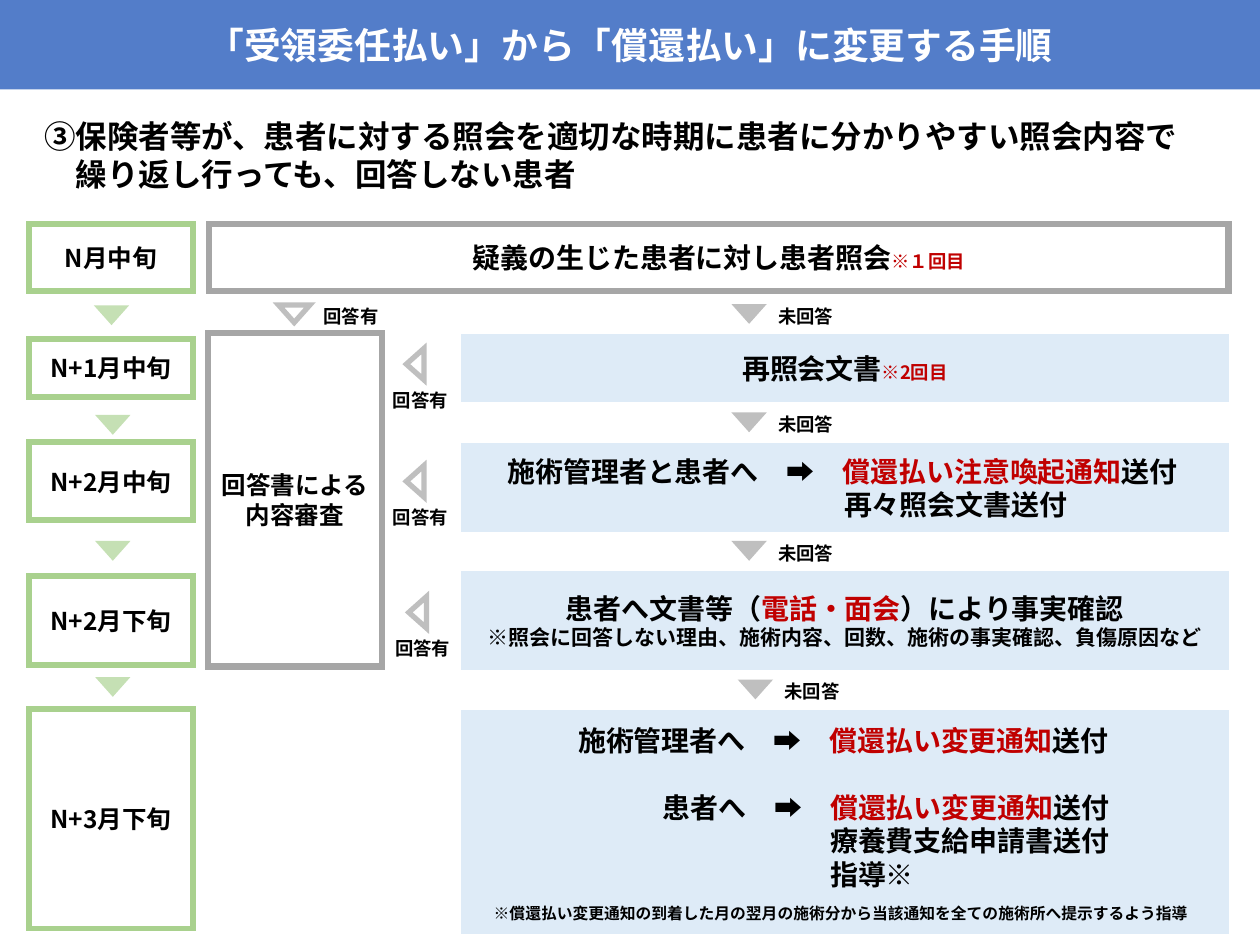
from lxml import etree
from pptx import Presentation
from pptx.dml.color import RGBColor
from pptx.enum.shapes import MSO_SHAPE
from pptx.enum.text import MSO_ANCHOR, MSO_AUTO_SIZE, PP_ALIGN
from pptx.oxml.ns import qn
from pptx.util import Emu, Pt

RECT, TRI = MSO_SHAPE.RECTANGLE, MSO_SHAPE.ISOSCELES_TRIANGLE
LEFT, MID = PP_ALIGN.LEFT, PP_ALIGN.CENTER
TOP, CORE = MSO_ANCHOR.TOP, MSO_ANCHOR.MIDDLE
FIXED = MSO_AUTO_SIZE.NONE

PX = 9144
THEME = {
    "font": "Noto Sans CJK JP",
    "ink": "000000", "red": "C00000", "white": "FFFFFF", "bar": "537DC9",
    "pale": "DEEBF7", "green": "A9D18E", "leaf": "C5E0B4",
    "gray": "A6A6A6", "ash": "BFBFBF",
    "title": 21, "lead": 18, "main": 16, "side": 14,
    "sub": 12, "small": 10.5, "foot": 9,
}


def write(shape, text, size="main", tint="ink", align=MID, anchor=CORE,
          pad=(5, 0, 5, 0), note=None, dent=0, gap=0, wrap=True):
    frame = shape.text_frame
    frame.word_wrap, frame.auto_size, frame.vertical_anchor = wrap, FIXED, anchor
    (frame.margin_left, frame.margin_top,
     frame.margin_right, frame.margin_bottom) = [Emu(n * PX) for n in pad]
    para = frame.add_paragraph() if frame.text else frame.paragraphs[0]
    para.alignment = align
    para.line_spacing = Pt(round(THEME[size] * 1.2, 1))
    para.space_before = Pt(gap)
    props = para._p.get_or_add_pPr()
    props.set("marL", str(dent * PX))
    props.set("indent", "0")
    etree.SubElement(props, qn("a:buNone"))
    for spot, part in enumerate(text.split("|")):
        if not part:
            continue
        red = spot % 2 == 1
        run = para.add_run()
        run.text = part
        font = run.font
        font.name, font.bold = THEME["font"], True
        font.size = Pt(THEME[note if red and note else size])
        font.color.rgb = RGBColor.from_string(THEME["red" if red else tint])
        face = etree.SubElement(run._r.get_or_add_rPr(), qn("a:ea"))
        face.set("typeface", THEME["font"])


def draw(kind, box, fill, line, width, turn=0):
    shape = slide.shapes.add_shape(kind, *[Emu(n * PX) for n in box])
    shape.shadow.inherit = False
    shape.rotation = turn
    if fill:
        shape.fill.solid()
        shape.fill.fore_color.rgb = RGBColor.from_string(THEME[fill])
    else:
        shape.fill.background()
    shape.line.color.rgb = RGBColor.from_string(THEME[line])
    shape.line.width = Pt(width)
    edge = shape._element.spPr.find(qn("a:ln"))
    etree.SubElement(edge, qn("a:miter")).set("lim", "800000")
    return shape


deck = Presentation()
deck.slide_width, deck.slide_height = Emu(1000 * PX), Emu(750 * PX)
slide = deck.slides.add_slide(deck.slide_layouts[1])
title, lead = slide.placeholders

for item, box in ((title, (0, 0, 1000, 71)), (lead, (25, 88, 953, 71))):
    item.left, item.top, item.width, item.height = [Emu(n * PX) for n in box]
title.fill.solid()
title.fill.fore_color.rgb = RGBColor.from_string(THEME["bar"])
write(title, "「受領委任払い」から「償還払い」に変更する手順", size="title", tint="white")
for text, dent in (
    ("③保険者等が、患者に対する照会を適切な時期に患者に分かりやすい照会内容で", 0),
    ("繰り返し行っても、回答しない患者", 25),
):
    write(lead, text, size="lead", align=LEFT, anchor=TOP,
          pad=(10, 5, 10, 5), dent=dent)

for text, top, high in (
    ("N月中旬", 178, 53), ("N+1月中旬", 269, 46), ("N+2月中旬", 351, 62),
    ("N+2月下旬", 457, 71), ("N+3月下旬", 563, 174),
):
    step = draw(RECT, (23, top, 130, high), None, "green", 3.25)
    write(step, text, size="side")

first = draw(RECT, (166, 178, 809, 53), None, "gray", 3.5)
write(first, "疑義の生じた患者に対し患者照会|※１回目|", note="small")
check = draw(RECT, (165, 264, 138, 265), None, "gray", 3.5)
write(check, "回答書による内容審査", size="side")

again, warn, visit, last = [
    draw(RECT, (370, top, 601, high), "pale", "pale", 6)
    for top, high in ((269, 46), (356, 62), (457, 71), (568, 169))
]
write(again, "再照会文書|※2回目|", note="small")
write(visit, "患者へ文書等（|電話・面会|）により事実確認")
write(visit, "※照会に回答しない理由、施術内容、回数、施術の事実確認、負傷原因など", size="sub")
for box, text, dent, gap, base in (
    (warn, "施術管理者と患者へ　➡　|償還払い注意喚起通知|送付", 23, 0, 0),
    (warn, "再々照会文書送付", 290, 0, 0),
    (last, "施術管理者へ　➡　|償還払い変更通知|送付", 79, 0, 24),
    (last, "患者へ　➡　|償還払い変更通知|送付", 146, 19, 24),
    (last, "療養費支給申請書送付", 279, 0, 24),
    (last, "指導※", 279, 0, 24),
):
    write(box, text, align=LEFT, pad=(10, 0, 10, base), dent=dent, gap=gap)

labels = [
    ("※償還払い変更通知の到着した月の翌月の施術分から当該通知を全ての施術所へ提示するよう指導",
     (382, 712, 579, 25), "foot"),
]
for left, top in ((582, 242), (582, 328), (582, 430), (587, 540)):
    draw(TRI, (left, top, 25, 14), "ash", "ash", 1, 180)
    labels.append(("未回答", (left + 26, top - 5, 64, 28), "small"))
for left, top, turn, over, down in (
    (221, 242, 180, 26, -5), (317, 282, 270, -15, 22),
    (317, 375, 270, -15, 22), (319, 479, 270, -15, 22),
):
    draw(TRI, (left, top, 25, 14), None, "ash", 3, turn)
    labels.append(("回答有", (left + over, top + down, 64, 28), "small"))
for left, top in ((76, 243), (77, 330), (77, 430), (77, 538)):
    draw(TRI, (left, top, 25, 14), "leaf", "leaf", 1, 180)

for text, box, size in labels:
    label = slide.shapes.add_textbox(*[Emu(n * PX) for n in box])
    write(label, text, size=size, align=LEFT, anchor=TOP,
          pad=(10, 5, 10, 5), wrap=False)

deck.save("out.pptx")
